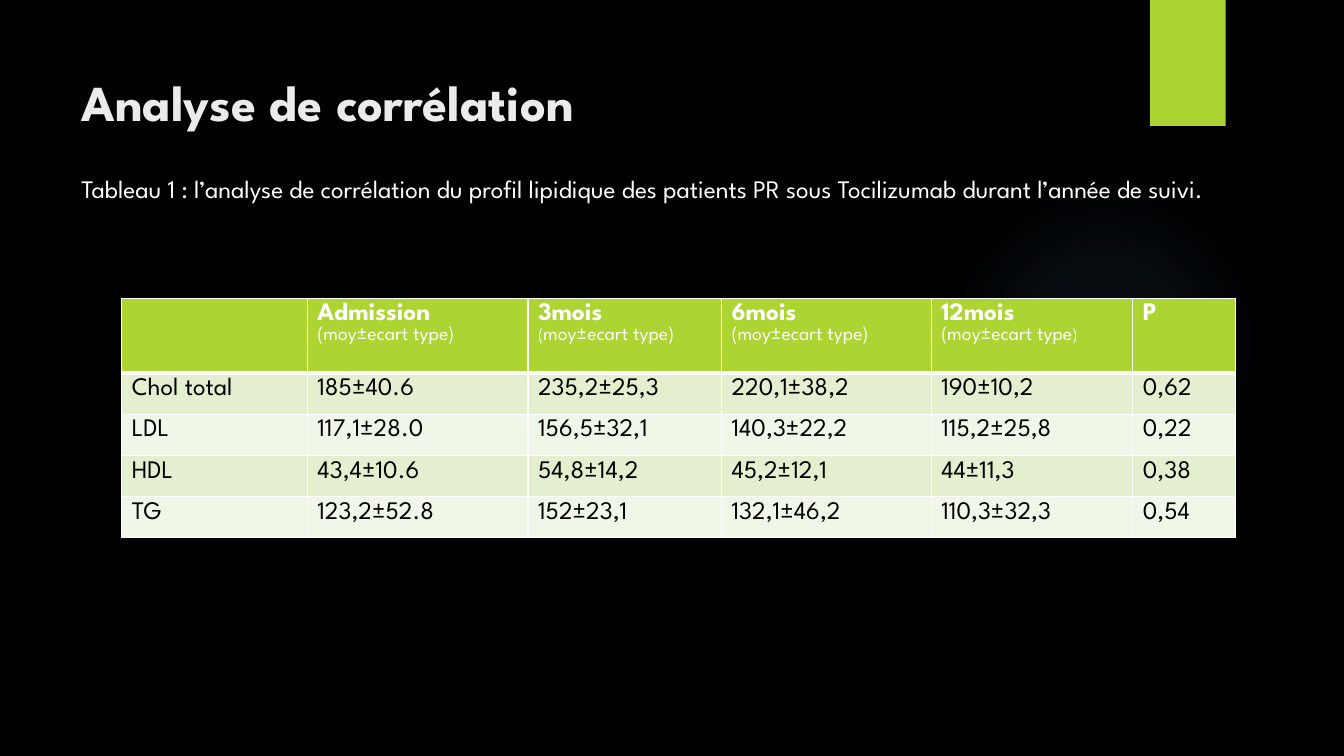
from lxml.etree import SubElement
from pptx import Presentation
from pptx.dml.color import RGBColor
from pptx.enum.shapes import MSO_SHAPE
from pptx.oxml import parse_xml
from pptx.oxml.ns import nsdecls, qn
from pptx.util import Pt

WHITE, BLACK, LIME = "FFFFFF", "000000", "ACD433"
BANDS = ["E3EFCE", "F1F7E8"]
COLUMN_WIDTHS = [132.5, 157.7, 138.2, 149.8, 144, 73.4]
ROW_HEIGHTS = [53.5] + [29.4] * 4
HEADINGS = [
    ("", []),
    ("Admission", [("(moy±ecart type)", 14)]),
    ("3mois", [("(", 12), ("moy±ecart type)", 14)]),
    ("6mois", [("(moy±ecart type)", 14)]),
    ("12mois", [("(moy±ecart type", 14), (")", 12)]),
    ("P", []),
]
RESULTS = [
    ["Chol total", "185±40.6", "235,2±25,3", "220,1±38,2", "190±10,2", "0,62"],
    ["LDL", "117,1±28.0", "156,5±32,1", "140,3±22,2", "115,2±25,8", "0,22"],
    ["HDL", "43,4±10.6", "54,8±14,2", "45,2±12,1", "44±11,3", "0,38"],
    ["TG", "123,2±52.8", "152±23,1", "132,1±46,2", "110,3±32,3", "0,54"],
]


def color(value):
    return RGBColor.from_string(value)


class SlideBuilder:
    font_name = "League Spartan"

    def __init__(self, page):
        self.page = page
        page.background.fill.solid()
        page.background.fill.fore_color.rgb = color(BLACK)

    def shape(self, kind, left, top, width, height):
        shape = self.page.shapes.add_shape(kind, Pt(left), Pt(top), Pt(width), Pt(height))
        shape.shadow.inherit = False
        shape.line.fill.background()
        return shape

    def rectangle(self, left, top, width, height, fill):
        shape = self.shape(MSO_SHAPE.RECTANGLE, left, top, width, height)
        shape.fill.solid()
        shape.fill.fore_color.rgb = color(fill)

    def glow(self, left, top, size, tint, stops):
        shape = self.shape(MSO_SHAPE.OVAL, left, top, size, size)
        stop_xml = "".join(
            f'<a:gs pos="{position * 1000}"><a:srgbClr val="{tint}">'
            f'<a:alpha val="{opacity * 1000}"/></a:srgbClr></a:gs>'
            for position, opacity in stops
        )
        gradient = parse_xml(
            f'<a:gradFill {nsdecls("a")}><a:gsLst>{stop_xml}</a:gsLst><a:path path="circle">'
            '<a:fillToRect l="50000" t="50000" r="50000" b="50000"/></a:path></a:gradFill>'
        )
        shape.element.spPr.find(qn("a:prstGeom")).addnext(gradient)

    def style(self, font, size, fill, bold=False):
        font.name = self.font_name
        font.size = Pt(size)
        font.bold = bold
        font.color.rgb = color(fill)

    def text(self, left, top, width, height, words, size, fill, inset, bold=False):
        box = self.page.shapes.add_textbox(Pt(left), Pt(top), Pt(width), Pt(height))
        frame = box.text_frame
        frame.word_wrap = True
        frame.margin_top = Pt(inset)
        para = frame.paragraphs[0]
        para.text = words
        self.style(para.font, size, fill, bold)

    def borders(self, cell, top, bottom):
        properties = cell._tc.get_or_add_tcPr()
        for side, width in {"L": 1, "R": 1, "T": top, "B": bottom}.items():
            line = SubElement(properties, qn(f"a:ln{side}"), w=str(Pt(width)))
            solid = SubElement(line, qn("a:solidFill"))
            SubElement(solid, qn("a:srgbClr"), val=WHITE)

    def cell(self, cell, words, fill, ink, bold=False, top=1, bottom=1):
        self.borders(cell, top, bottom)
        cell.fill.solid()
        cell.fill.fore_color.rgb = color(fill)
        para = cell.text_frame.paragraphs[0]
        para.text = words
        self.style(para.font, 18, ink, bold)

    def subheading(self, cell, spans):
        para = cell.text_frame.add_paragraph()
        for words, size in spans:
            span = para.add_run()
            span.text = words
            self.style(span.font, size, WHITE)

    def table(self, left, top, widths, heights, headings, rows):
        frame = self.page.shapes.add_table(
            len(heights), len(widths), Pt(left), Pt(top), Pt(sum(widths)), Pt(sum(heights))
        )
        table = frame.table
        table.horz_banding = False
        for column, width in zip(table.columns, widths):
            column.width = Pt(width)
        for row, height in zip(table.rows, heights):
            row.height = Pt(height)
        for index, (heading, spans) in enumerate(headings):
            cell = table.cell(0, index)
            self.cell(cell, heading, LIME, WHITE, bold=True, bottom=3)
            if spans:
                self.subheading(cell, spans)
        for number, values in enumerate(rows):
            for index, value in enumerate(values):
                self.cell(table.cell(number + 1, index), value, BANDS[number % 2], BLACK,
                          top=1 if number else 3)


def main():
    deck = Presentation()
    deck.slide_width, deck.slide_height = Pt(960), Pt(540)
    builder = SlideBuilder(deck.slides.add_slide(deck.slide_layouts[6]))
    builder.glow(677.5, 131.8, 221.8, "7AC4F0", [(0, 7), (36, 6), (69, 0)])
    builder.rectangle(821.5, 0, 54, 90, LIME)
    builder.text(51, 36, 741, 110, "Analyse de corrélation", 36, "EBEBEB", 15, bold=True)
    builder.text(
        51, 115.2, 864.7, 330.5,
        "Tableau 1\u00a0: l’analyse de corrélation du profil lipidique des patients PR "
        "sous Tocilizumab durant l’année de suivi.",
        18, WHITE, 8.6,
    )
    builder.table(87, 213, COLUMN_WIDTHS, ROW_HEIGHTS, HEADINGS, RESULTS)
    deck.save("out.pptx")


if __name__ == "__main__":
    main()
